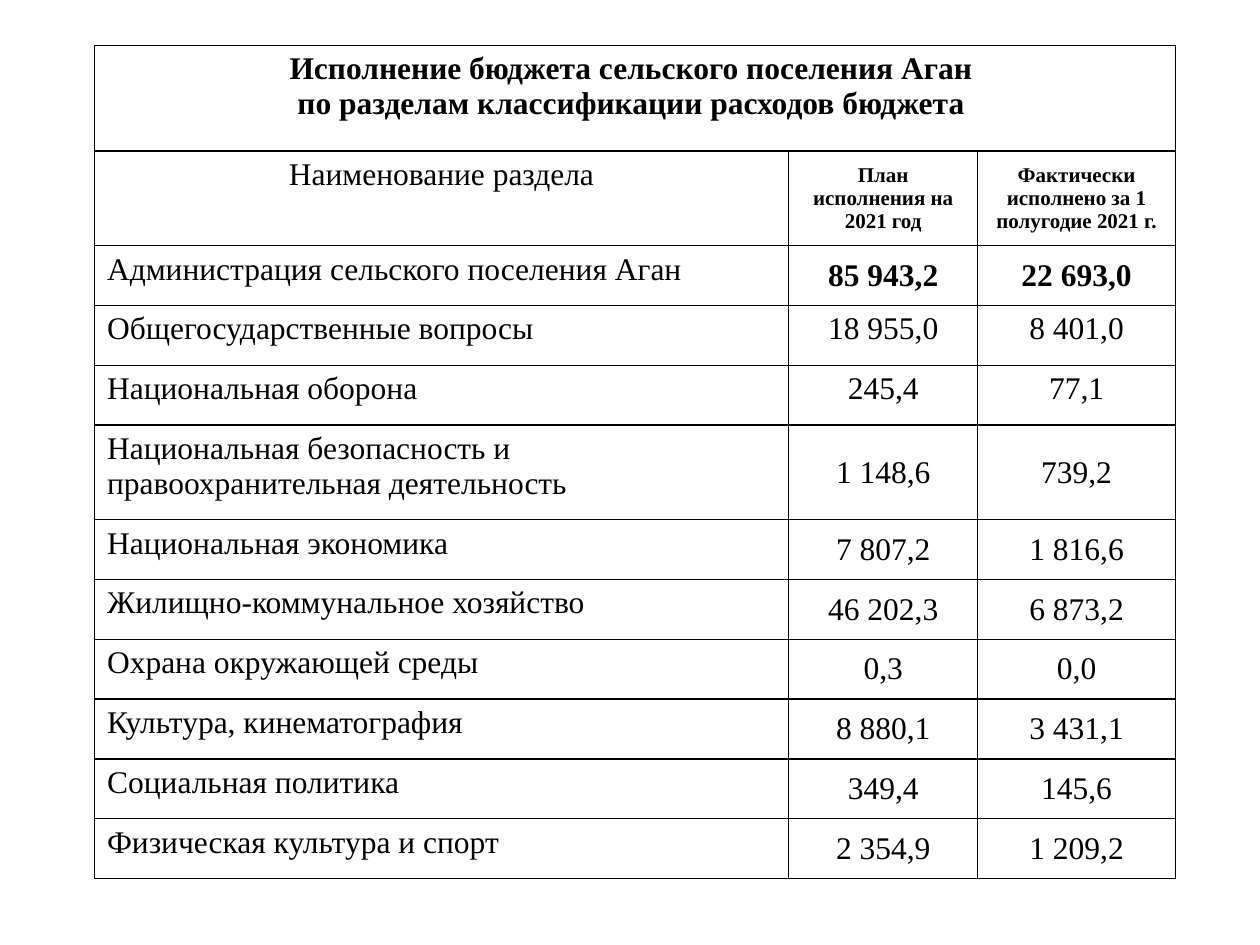
import pptx
import pptx.util
import pptx.dml.color
import pptx.enum.text
import pptx.oxml

Inches = pptx.util.Inches
Pt = pptx.util.Pt
Align = pptx.enum.text.PP_ALIGN
Anchor = pptx.enum.text.MSO_ANCHOR
INK = "000000"
NS = "http://schemas.openxmlformats.org/drawingml/2006/main"


def color(code):
    return pptx.dml.color.RGBColor.from_string(code)


def write(cell, text, size=18, bold=False, align=Align.CENTER, anchor=Anchor.MIDDLE):
    cell.vertical_anchor = anchor
    cell.text_frame.text = text
    for para in cell.text_frame.paragraphs:
        para.alignment = align
        for run in para.runs:
            run.font.name = "Times New Roman"
            run.font.size = Pt(size)
            run.font.bold = bold
            run.font.color.rgb = color(INK)


deck = pptx.Presentation()
deck.slide_width = Inches(10)
deck.slide_height = Inches(7.5)
slide = deck.slides.add_slide(deck.slide_layouts[6])

budget = [
    ("Администрация сельского поселения Аган", "85 943,2", "22 693,0"),
    ("Общегосударственные вопросы", "18 955,0", "8 401,0"),
    ("Национальная оборона", "245,4", "77,1"),
    ("Национальная безопасность и правоохранительная деятельность", "1 148,6", "739,2"),
    ("Национальная экономика", "7 807,2", "1 816,6"),
    ("Жилищно-коммунальное хозяйство", "46 202,3", "6 873,2"),
    ("Охрана окружающей среды", "0,3", "0,0"),
    ("Культура, кинематография", "8 880,1", "3 431,1"),
    ("Социальная политика", "349,4", "145,6"),
    ("Физическая культура и спорт", "2 354,9", "1 209,2"),
]
widths = [5.51, 1.5, 1.57]
heights = [0.84, 0.75] + [0.75 if len(name) > 50 else 0.475 for name, *_ in budget]

frame = slide.shapes.add_table(
    len(heights), len(widths), Inches(0.75), Inches(0.36),
    Inches(sum(widths)), Inches(sum(heights)))
table = frame.table
table.first_row = False
table.horz_banding = False
for col, width in zip(table.columns, widths):
    col.width = Inches(width)
for row, height in zip(table.rows, heights):
    row.height = Inches(height)

for cell in table.iter_cells():
    cell.fill.background()
    props = cell._tc.get_or_add_tcPr()
    for spot, side in enumerate(["lnL", "lnR", "lnT", "lnB"]):
        props.insert(spot, pptx.oxml.parse_xml(
            f'<a:{side} xmlns:a="{NS}" w="{Pt(1)}"><a:solidFill>'
            f'<a:srgbClr val="{INK}"/></a:solidFill></a:{side}>'))

table.cell(0, 0).merge(table.cell(0, 2))
write(table.cell(0, 0),
      "Исполнение бюджета сельского поселения Аган \n"
      "по разделам классификации расходов бюджета ",
      bold=True, anchor=Anchor.TOP)
write(table.cell(1, 0), "Наименование раздела", anchor=Anchor.TOP)
write(table.cell(1, 1), "План исполнения на 2021 год", size=12, bold=True)
write(table.cell(1, 2), "Фактически исполнено за 1 полугодие 2021 г.", size=12, bold=True)

for row, (name, *sums) in enumerate(budget, 2):
    write(table.cell(row, 0), name, align=Align.LEFT, anchor=Anchor.TOP)
    for col, value in enumerate(sums, 1):
        write(table.cell(row, col), value, bold=row == 2,
              anchor=Anchor.TOP if row in (3, 4) else Anchor.MIDDLE)

deck.save("out.pptx")
